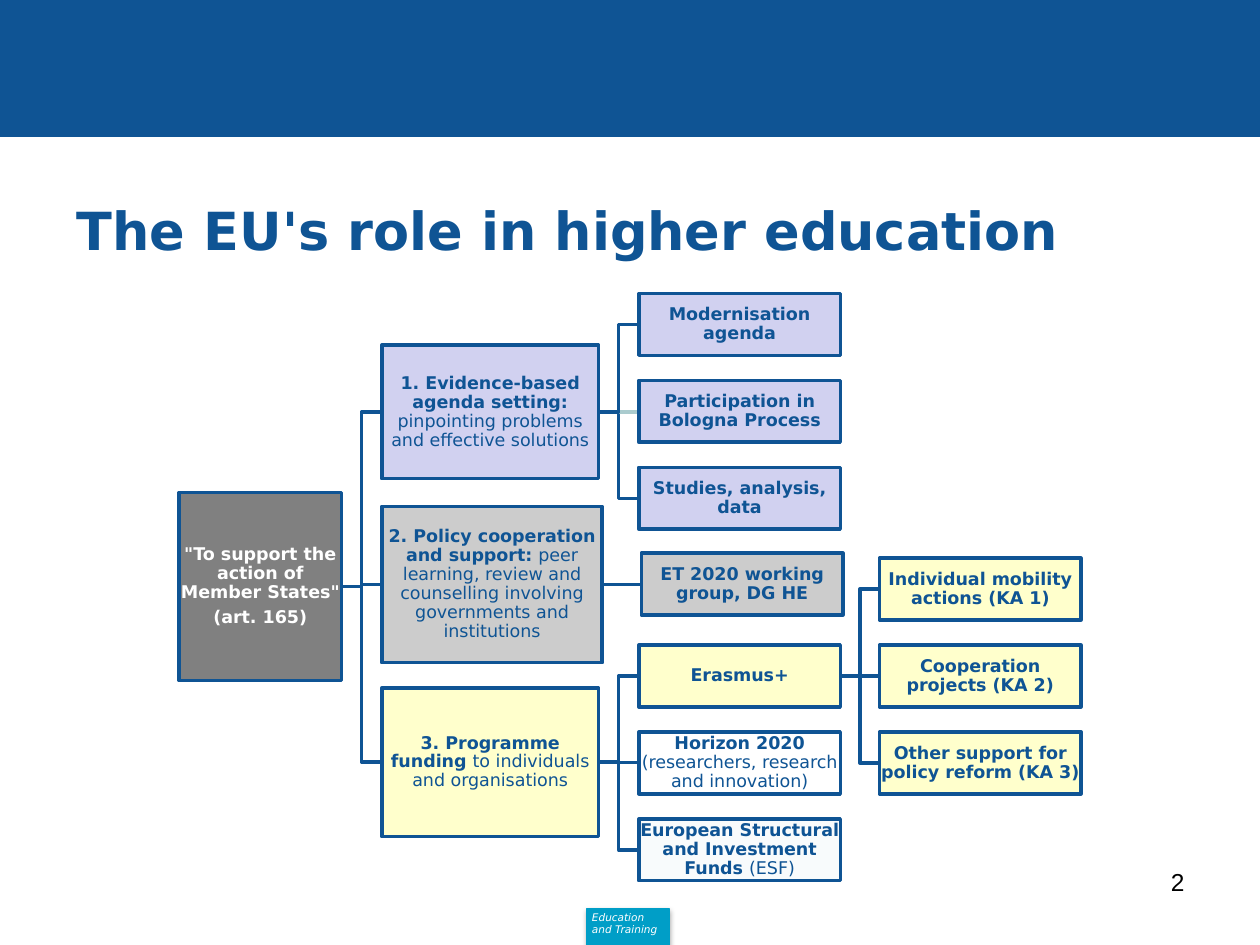
import pptx
import pptx.util
import pptx.dml.color
import pptx.enum.shapes
import pptx.enum.text
import pptx.oxml
import pptx.oxml.ns
import pptx.oxml.xmlchemy

HUES = {"navy": "0F5494", "teal": "009EC7", "pale": "AACBCE", "gray": "808080",
        "lilac": "D1D1F0", "silver": "CCCCCC", "cream": "FFFFCC",
        "white": "FFFFFF", "ice": "F8FBFC", "black": "000000"}
FACE = "DejaVu Sans"
COLS = [1.42, 3.03, 5.07, 6.98]
PITCH, WIDE, TALL = 0.69, 1.6, 0.49
TOP, LOW = 2.33, 4.43
ALIGN = pptx.enum.text.PP_ALIGN
ANCHOR = pptx.enum.text.MSO_ANCHOR
KINDS = pptx.enum.shapes.MSO_SHAPE


def inch(size):
    return pptx.util.Inches(size)


def hue(name):
    return pptx.dml.color.RGBColor.from_string(HUES[name])


def leaf(col, top, row):
    return COLS[col], top + row * PITCH, WIDE, TALL


NODES = {
    "root": ((COLS[0], 3.91, 1.29, 1.49), "gray",
             [['"To support the action of Member States"'], ["(art. 165)"]]),
    "agenda": ((COLS[1], 2.74, 1.72, 1.06), "lilac",
               [["1. Evidence-based agenda setting: ",
                 "pinpointing problems and effective solutions"]]),
    "policy": ((COLS[1], 4.02, 1.75, 1.24), "silver",
               [["2. Policy cooperation and support: ",
                 "peer learning, review and counselling involving governments and institutions"]]),
    "funds": ((COLS[1], 5.46, 1.72, 1.18), "cream",
              [["3. Programme funding ", "to individuals and organisations"]]),
    "modern": (leaf(2, TOP, 0), "lilac", [["Modernisation agenda"]]),
    "bologna": (leaf(2, TOP, 1), "lilac", [["Participation in Bologna Process"]]),
    "studies": (leaf(2, TOP, 2), "lilac", [["Studies, analysis, data"]]),
    "group": ((5.09, 4.39, WIDE, TALL), "silver", [["ET 2020 working group, DG HE"]]),
    "erasmus": (leaf(2, LOW, 1), "cream", [["Erasmus+"]]),
    "horizon": (leaf(2, LOW, 2), "white",
                [["Horizon 2020 ", "(researchers, research and innovation)"]]),
    "social": (leaf(2, LOW, 3), "ice",
               [["European Structural and Investment Funds ", "(ESF)"]]),
    "mobile": (leaf(3, LOW, 0), "cream", [["Individual mobility actions (KA 1)"]]),
    "joint": (leaf(3, LOW, 1), "cream", [["Cooperation projects (KA 2)"]]),
    "reform": (leaf(3, LOW, 2), "cream", [["Other support for policy reform (KA 3)"]]),
}
LINKS = {"funds": ["social", "horizon", "erasmus"],
         "erasmus": ["reform", "joint", "mobile"],
         "policy": ["group"],
         "agenda": ["studies", "bologna", "modern"],
         "root": ["funds", "policy", "agenda"]}


def style(font, size, tint, bold=None, face=FACE):
    font.name, font.size, font.bold = face, pptx.util.Pt(size), bold
    font.color.rgb = hue(tint)


def block(slide, place, fill, edge, width):
    box = slide.shapes.add_shape(KINDS.RECTANGLE, *map(inch, place))
    box.shadow.inherit = False
    box.fill.solid()
    box.fill.fore_color.rgb = hue(fill)
    box.line.color.rgb = hue(edge)
    box.line.width = pptx.util.Pt(width)
    return box


def label(slide, place, text, size, tint, bold=None, face=FACE):
    frame = slide.shapes.add_textbox(*map(inch, place)).text_frame
    frame.word_wrap = True
    frame.text = text
    para = frame.paragraphs[0]
    style(para.font, size, tint, bold, face)
    return frame, para


def node(slide, place, fill, paras):
    frame = block(slide, place, fill, "navy", 2).text_frame
    frame.word_wrap = True
    frame.vertical_anchor = ANCHOR.MIDDLE
    frame.margin_left = frame.margin_right = inch(0.01)
    frame.margin_top = frame.margin_bottom = inch(0.01)
    for spot, parts in enumerate(paras):
        para = frame.add_paragraph() if spot else frame.paragraphs[0]
        para.alignment = ALIGN.CENTER
        para.line_spacing = 0.9
        para.space_after = pptx.util.Pt(3.5)
        style(para.font, 10, "white" if fill == "gray" else "navy", True)
        for turn, part in enumerate(parts):
            run = para.add_run()
            run.text = part
            if turn:
                run.font.bold = False


def link(slide, start, end, tint):
    left, top, width, height = start
    x1, y1 = inch(left + width), inch(top + height / 2)
    x2, y2 = inch(end[0]), inch(end[1] + end[3] / 2)
    if abs(y1 - y2) < inch(0.02) and left > COLS[0]:
        line = slide.shapes.add_connector(
            pptx.enum.shapes.MSO_CONNECTOR.STRAIGHT, x1, y1, x2, y1)
        bare = pptx.oxml.xmlchemy.OxmlElement("a:effectLst")
        line._element.spPr.append(bare)
    else:
        mid = (x1 + x2) // 2
        bend = slide.shapes.build_freeform(x1, y1)
        bend.add_line_segments([(mid, y1), (mid, y2), (x2, y2)], close=False)
        line = bend.convert_to_shape()
        line.shadow.inherit = False
        line.fill.background()
    line.line.color.rgb = hue(tint)
    line.line.width = pptx.util.Pt(2)


def shade(box):
    space = pptx.oxml.ns.nsdecls("a")
    glow = pptx.oxml.parse_xml(
        f'<a:outerShdw {space} blurRad="39370" dist="22860" dir="5400000" rotWithShape="0">'
        f'<a:srgbClr val="{HUES["black"]}"><a:alpha val="35000"/></a:srgbClr></a:outerShdw>')
    box._element.spPr.find(pptx.oxml.ns.qn("a:effectLst")).append(glow)


def trim(slide):
    block(slide, (0, 0, 10, 1.08), "navy", "navy", 0.75)
    shade(block(slide, (4.66, 7.21, 0.65, 0.3), "teal", "teal", 0.75))
    _, para = label(slide, (4.6, 7.18, 0.83, 0.27), "Education\vand Training", 6, "white")
    para.font.italic = True
    head, _ = label(slide, (0.51, 1.31, 9.21, 1.02),
                    "The EU's role in higher education", 30, "navy", True)
    head.vertical_anchor = ANCHOR.MIDDLE
    _, para = label(slide, (7.17, 6.83, 2.33, 0.52), "2", 14, "black", face="Arial")
    para.alignment = ALIGN.RIGHT


def main():
    deck = pptx.Presentation()
    deck.slide_width, deck.slide_height = inch(10), inch(7.5)
    slide = deck.slides.add_slide(deck.slide_layouts[6])
    trim(slide)
    for start, ends in LINKS.items():
        for end in ends:
            tint = "pale" if end == "bologna" else "navy"
            link(slide, NODES[start][0], NODES[end][0], tint)
    for place, fill, paras in NODES.values():
        node(slide, place, fill, paras)
    deck.save("out.pptx")


if __name__ == "__main__":
    main()
